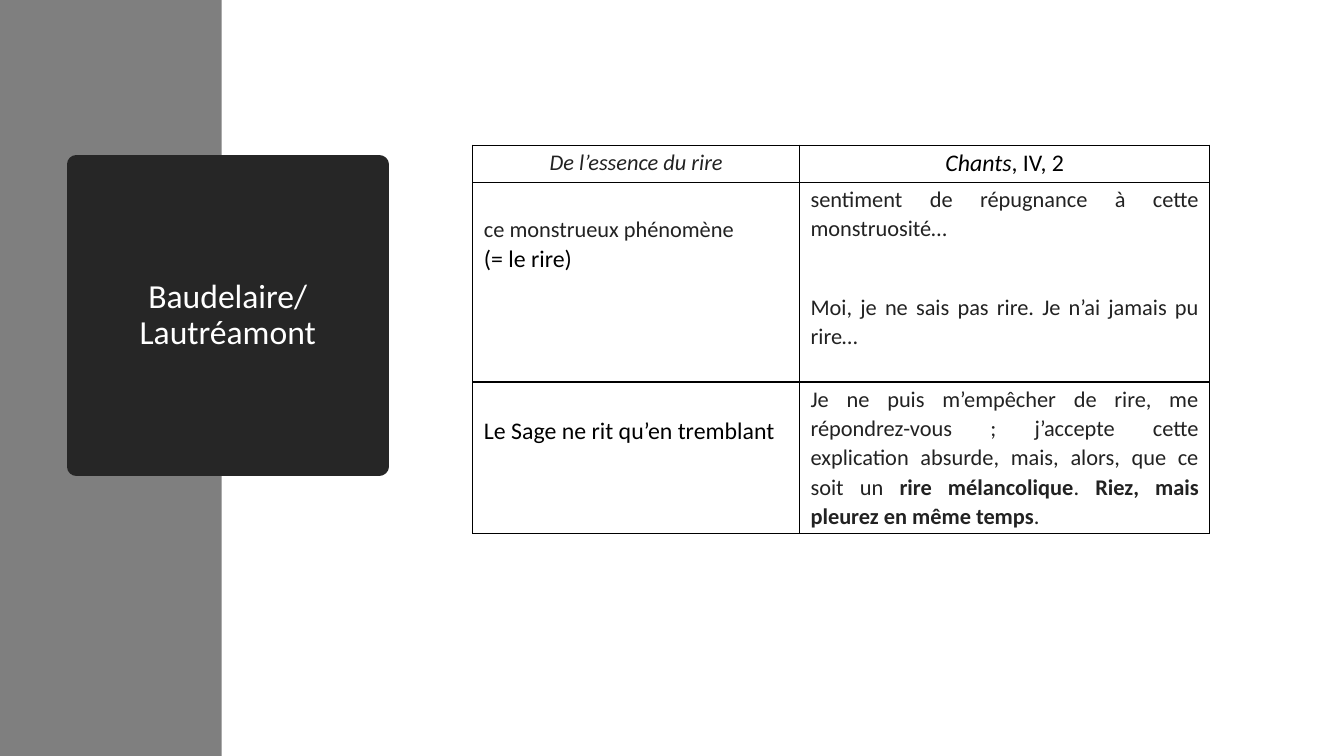
from lxml import etree
from pptx import Presentation
from pptx.dml.color import RGBColor
from pptx.enum.shapes import MSO_SHAPE
from pptx.enum.text import MSO_ANCHOR, PP_ALIGN
from pptx.oxml.ns import qn
from pptx.util import Inches, Pt

RECT = MSO_SHAPE.RECTANGLE
MIDDLE = MSO_ANCHOR.MIDDLE
CENTER, JUSTIFY = PP_ALIGN.CENTER, PP_ALIGN.JUSTIFY

THEME = {
    "font": "Calibri",
    "band": "7F7F7F", "card": "262626", "border": "000000",
    "card_line": 13.75, "border_line": 1,
    "title": {"size": 24, "color": "FFFFFF"},
    "quote": {"size": 16, "color": "222222"},
    "work": {"size": 16, "color": "222222", "italic": True},
    "strong": {"size": 16, "color": "222222", "bold": True},
    "note": {"size": 17, "color": "000000"},
    "note_work": {"size": 17, "color": "000000", "italic": True},
}

TITLE = "Baudelaire/\vLautréamont"
BAND = (0, 0, 2.2, 7.5)
CARD = (0.76, 1.63, 3, 3)
TABLE_AT = (4.69, 1.44)
COLS = (3.24, 4.07)
ROWS = (0.37, 1.98, 1.5)

# Each cell: (gap above in points, paragraphs); each paragraph: (space before, runs).
CELLS = [
    [
        (0, [(0, [("De l’essence du rire", "work")])]),
        (0, [(0, [("Chants", "note_work"), (", IV, 2", "note")])]),
    ],
    [
        (21, [(0, [("ce monstrueux phénomène", "quote")]),
              (0, [("(= le rire)", "note")])]),
        (0, [(0, [("sentiment de répugnance à cette monstruosité…", "quote")]),
             (35, [("Moi, je ne sais pas rire. Je n’ai jamais pu rire…", "quote")])]),
    ],
    [
        (22, [(0, [("Le Sage ne rit qu’en tremblant", "note")])]),
        (0, [(0, [
            ("Je ne puis m’empêcher de rire, me répondrez-vous ; j’accepte cette "
             "explication absurde, mais, alors, que ce soit un ", "quote"),
            ("rire mélancolique", "strong"), (". ", "quote"),
            ("Riez, mais pleurez en même temps", "strong"), (".", "quote"),
        ])]),
    ],
]


def style_font(font, name):
    style = THEME[name]
    values = {"name": THEME["font"], "size": Pt(style["size"]),
              "bold": style.get("bold", False), "italic": style.get("italic", False)}
    for key, value in values.items():
        setattr(font, key, value)
    font.color.rgb = RGBColor.from_string(style["color"])


def add_block(s, box, color, line_width=0):
    sp = s.shapes.add_shape(RECT, *map(Inches, box))
    sp.shadow.inherit = False
    sp.fill.solid()
    sp.fill.fore_color.rgb = RGBColor.from_string(color)
    if line_width:
        sp.line.color.rgb = RGBColor.from_string(color)
        sp.line.width = Pt(line_width)
        etree.SubElement(sp.line._ln, qn("a:round"))
    else:
        sp.line.fill.background()
    return sp


def add_borders(cell):
    tcPr = cell._tc.get_or_add_tcPr()
    for i, side in enumerate(("lnL", "lnR", "lnT", "lnB")):
        ln = etree.Element(qn(f"a:{side}"), w=str(Pt(THEME["border_line"])))
        fill = etree.SubElement(ln, qn("a:solidFill"))
        etree.SubElement(fill, qn("a:srgbClr"), val=THEME["border"])
        tcPr.insert(i, ln)


def fill_cell(cell, gap, paragraphs, align):
    margins = {"margin_left": Inches(0.11), "margin_right": Inches(0.11),
               "margin_top": Inches(0.02) + Pt(gap), "margin_bottom": 0}
    for key, value in margins.items():
        setattr(cell, key, value)
    cell.fill.background()
    add_borders(cell)
    tf = cell.text_frame
    for i, (before, runs) in enumerate(paragraphs):
        p = tf.add_paragraph() if i else tf.paragraphs[0]
        p.alignment, p.line_spacing, p.space_before = align, 1.07, Pt(before)
        for text, name in runs:
            r = p.add_run()
            r.text = text
            style_font(r.font, name)


def add_title(s):
    tf = add_block(s, CARD, THEME["card"], THEME["card_line"]).text_frame
    tf.word_wrap, tf.vertical_anchor = True, MIDDLE
    p = tf.paragraphs[0]
    p.text, p.alignment, p.line_spacing = TITLE, CENTER, 0.9
    for r in p.runs:
        style_font(r.font, "title")


def add_quotes(s):
    box = (*TABLE_AT, sum(COLS), sum(ROWS))
    table = s.shapes.add_table(len(ROWS), len(COLS), *map(Inches, box)).table
    table.first_row = table.horz_banding = False
    for col, width in zip(table.columns, COLS):
        col.width = Inches(width)
    for i, (row, height) in enumerate(zip(table.rows, ROWS)):
        row.height = Inches(height)
        for cell, (gap, paragraphs) in zip(row.cells, CELLS[i]):
            fill_cell(cell, gap, paragraphs, JUSTIFY if i else CENTER)


def main():
    prs = Presentation()
    prs.slide_width, prs.slide_height = Inches(13.33), Inches(7.5)
    s = prs.slides.add_slide(prs.slide_layouts[6])
    add_block(s, BAND, THEME["band"])
    add_title(s)
    add_quotes(s)
    prs.save("out.pptx")


if __name__ == "__main__":
    main()
